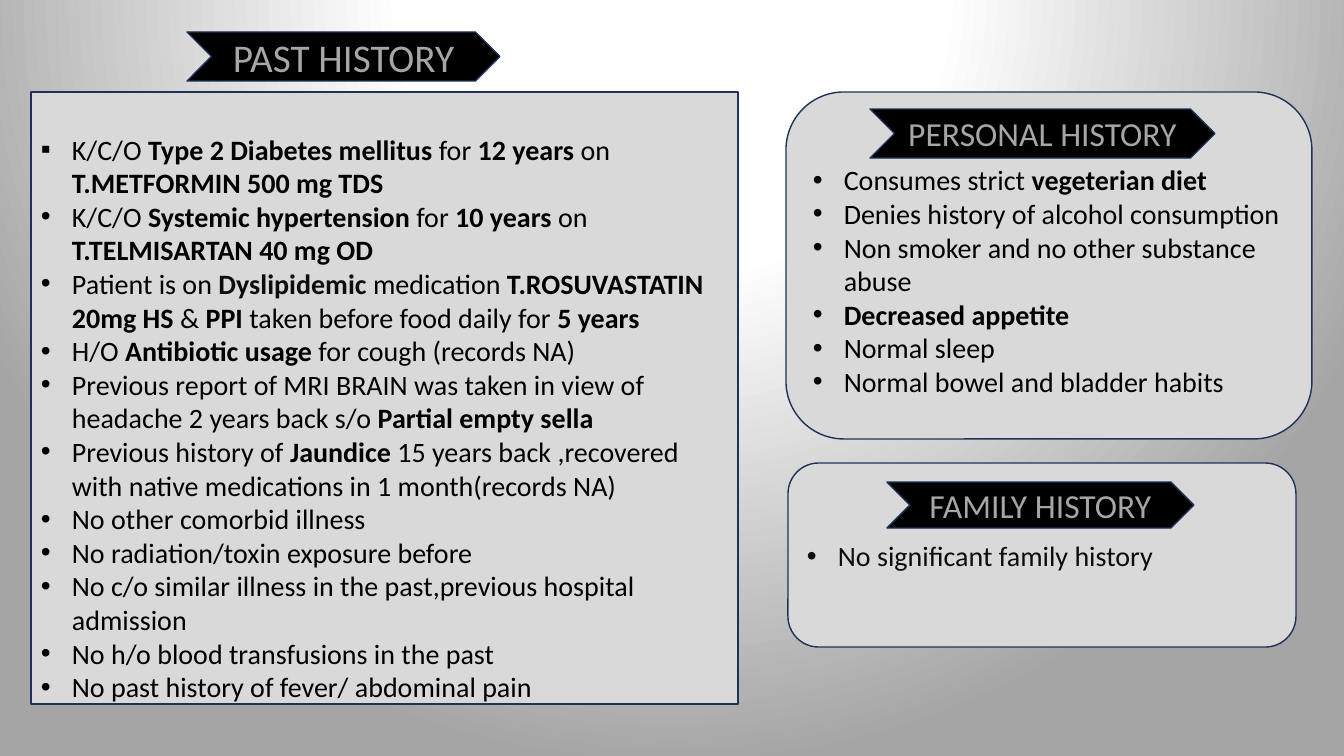
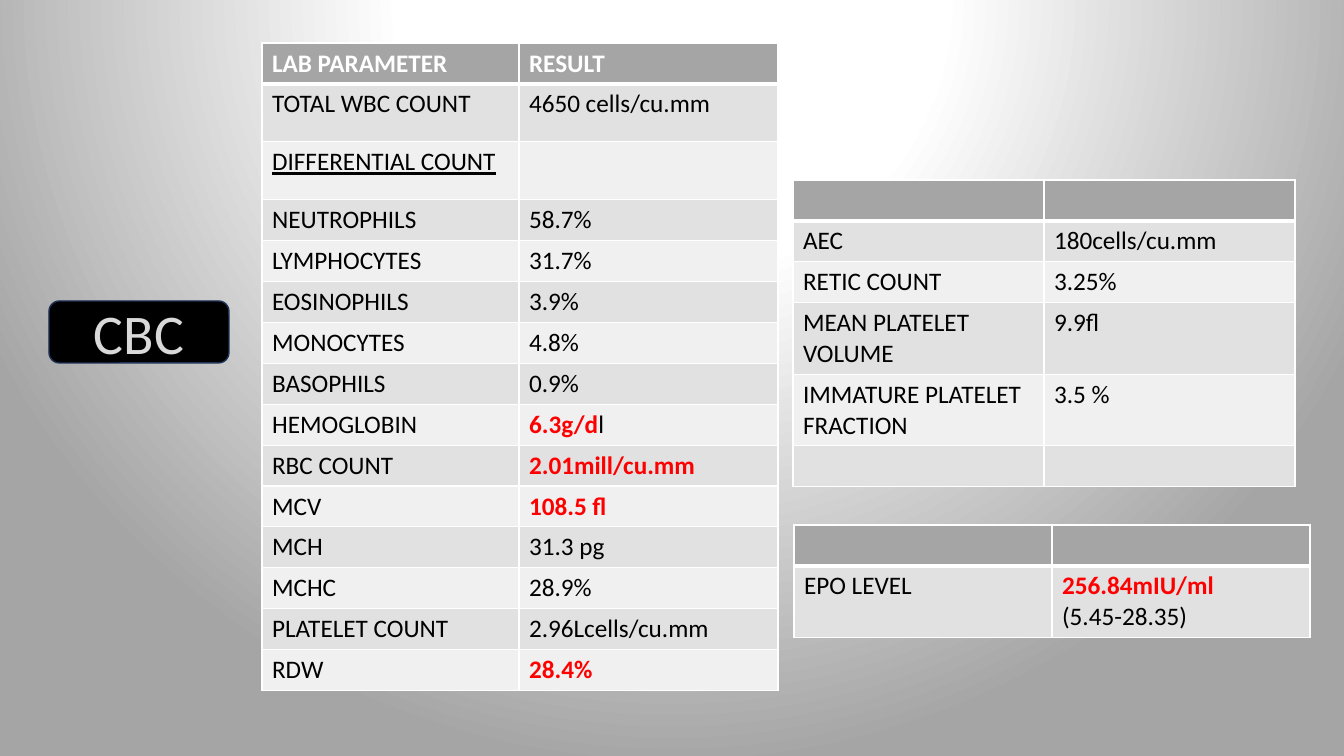
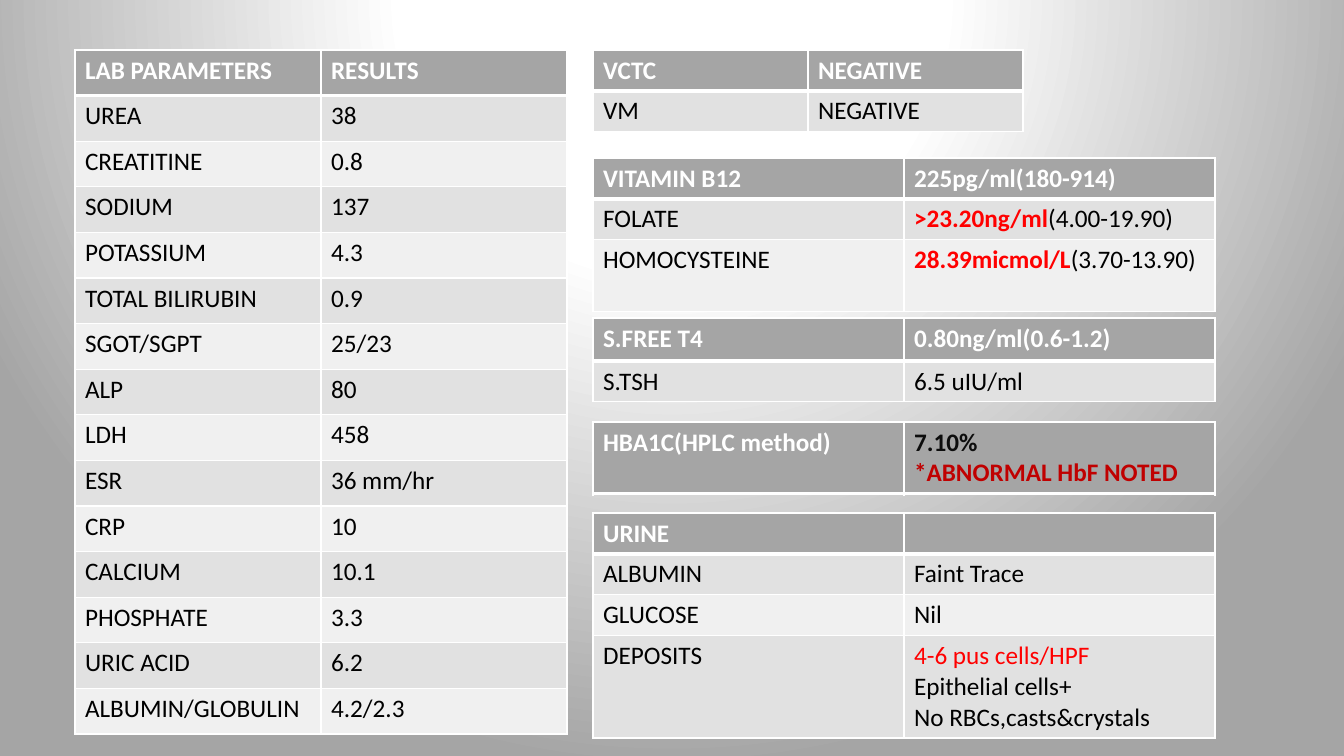
from dataclasses import dataclass

from pptx import Presentation
from pptx.dml.color import RGBColor
from pptx.enum.shapes import MSO_SHAPE
from pptx.enum.text import MSO_ANCHOR, PP_ALIGN
from pptx.oxml import parse_xml
from pptx.oxml.ns import nsdecls, qn
from pptx.util import Pt

PX = 914400 / 100.8
FONT = "Calibri"
BLACK = RGBColor(0x00, 0x00, 0x00)
WHITE = RGBColor(0xFF, 0xFF, 0xFF)
INK = RGBColor(0x0D, 0x0D, 0x0D)
RED = RGBColor(0xFF, 0x00, 0x00)
DARK_RED = RGBColor(0xC0, 0x00, 0x00)
NAVY = RGBColor(0x1E, 0x32, 0x56)
PANEL = RGBColor(0xD9, 0xD9, 0xD9)
TITLE = RGBColor(0xA6, 0xA6, 0xA6)
HEADER = RGBColor(0xA5, 0xA5, 0xA5)
BANDS = (RGBColor(0xE1, 0xE1, 0xE1), RGBColor(0xF0, 0xF0, 0xF0))
ROW = 40
TWO_LINES = 71


@dataclass
class Run:
    text: str
    bold: bool = None
    color: RGBColor = None
    underline: bool = None


def bold(text, color=None):
    return Run(text, True, color)


def high(text):
    """A result outside its normal range."""
    return Run(text, True, RED)


# A paragraph is one run or a list of runs; a plain string is a plain run.
PAST = [
    ["K/C/O ", bold("Type 2 Diabetes mellitus "), "for ", bold("12 years "), "on ",
     bold("T.METFORMIN 500 mg TDS")],
    ["K/C/O ", bold("Systemic hypertension "), "for ", bold("10 years "), "on ",
     bold("T.TELMISARTAN 40 mg OD")],
    ["Patient is on ", bold("Dyslipidemic", INK), " medication ",
     bold("T.ROSUVASTATIN 20mg HS "), "& ", bold("PPI"),
     " taken before food daily for ", bold("5 years")],
    ["H/O ", bold("Antibiotic usage "), "for cough (records NA)"],
    ["Previous report of MRI BRAIN was taken in view of headache 2 years back s/o ",
     bold("Partial empty sella")],
    ["Previous history of ", bold("Jaundice"),
     " 15 years back ,recovered with native medications in 1 month(records NA)"],
    "No other comorbid illness",
    "No radiation/toxin exposure before",
    "No c/o similar illness in the past,previous hospital admission",
    "No h/o blood transfusions in the past",
    "No past history of fever/ abdominal pain",
]
PERSONAL = [
    ["Consumes strict ", bold("vegeterian diet")],
    "Denies history of alcohol consumption",
    "Non smoker and no other substance abuse",
    bold("Decreased appetite"),
    "Normal sleep",
    "Normal bowel and bladder habits",
]
FAMILY = [Run("No significant family history", color=INK)]

# shape, box, top inset, first bullet, paragraphs
PANELS = [
    (MSO_SHAPE.RECTANGLE, (31, 92, 707, 612), 40, "▪", PAST),
    (MSO_SHAPE.ROUNDED_RECTANGLE, (786, 92, 526, 347), 54, "•", PERSONAL),
    (MSO_SHAPE.ROUNDED_RECTANGLE, (788, 463, 508, 184), 67, "•", FAMILY),
]
# shape, box, text, size, colour
HISTORY_LABELS = [
    (MSO_SHAPE.CHEVRON, (187, 32, 313, 49), "PAST HISTORY", 28, TITLE),
    (MSO_SHAPE.CHEVRON, (870, 109, 345, 49), "PERSONAL HISTORY", 24, TITLE),
    (MSO_SHAPE.CHEVRON, (887, 482, 307, 46), "FAMILY HISTORY", 24, TITLE),
]
CBC_LABELS = [
    (MSO_SHAPE.ROUNDED_RECTANGLE, (49, 301, 180, 62), "CBC", 40, PANEL),
]

# left and top, column widths, row heights, rows; a tuple in a cell holds paragraphs
CBC_TABLES = [
    ((262, 43), (257, 259), [ROW, 58, 58] + [ROW] * 12, [
        ["LAB PARAMETER", "RESULT"],
        ["TOTAL WBC COUNT", "4650 cells/cu.mm"],
        [Run("DIFFERENTIAL COUNT", underline=True), ""],
        ["NEUTROPHILS", "58.7%"],
        ["LYMPHOCYTES", "31.7%"],
        ["EOSINOPHILS", "3.9%"],
        ["MONOCYTES", "4.8%"],
        ["BASOPHILS", "0.9%"],
        ["HEMOGLOBIN", [high("6.3g/d"), "l"]],
        ["RBC COUNT", high("2.01mill/cu.mm")],
        ["MCV", high("108.5 fl")],
        ["MCH", "31.3 pg"],
        ["MCHC", "28.9%"],
        ["PLATELET COUNT", "2.96Lcells/cu.mm"],
        ["RDW", high("28.4%")],
    ]),
    ((793, 180), (251, 251), [ROW] * 3 + [TWO_LINES] * 2 + [ROW], [
        ["", ""],
        ["AEC", "180cells/cu.mm"],
        ["RETIC COUNT", "3.25%"],
        ["MEAN PLATELET VOLUME", "9.9fl"],
        ["IMMATURE PLATELET FRACTION", "3.5 %"],
        ["", ""],
    ]),
    ((794, 525), (258, 258), [ROW, TWO_LINES], [
        ["", ""],
        ["EPO LEVEL", (high("256.84mIU/ml"), "(5.45-28.35)")],
    ]),
]
RIGHT = 593
WIDE = (311, 311)
LAB_TABLES = [
    ((75, 50), (246, 246), [684 / 15] * 15, [
        ["LAB PARAMETERS", "RESULTS"],
        ["UREA", "38"],
        ["CREATITINE", "0.8"],
        ["SODIUM", "137"],
        ["POTASSIUM", "4.3"],
        ["TOTAL BILIRUBIN", "0.9"],
        ["SGOT/SGPT", "25/23"],
        ["ALP", "80"],
        ["LDH", "458"],
        ["ESR", "36 mm/hr"],
        ["CRP", "10"],
        ["CALCIUM", "10.1"],
        ["PHOSPHATE", "3.3"],
        ["URIC ACID", "6.2"],
        ["ALBUMIN/GLOBULIN", "4.2/2.3"],
    ]),
    ((RIGHT, 50), (215, 215), [ROW] * 2, [
        ["VCTC", "NEGATIVE"],
        ["VM", "NEGATIVE"],
    ]),
    ((RIGHT, 158), WIDE, [ROW, ROW, 72], [
        ["VITAMIN B12", "225pg/ml(180-914)"],
        ["FOLATE", [high(">23.20ng/ml"), "(4.00-19.90)"]],
        ["HOMOCYSTEINE", [high("28.39micmol/L"), "(3.70-13.90)"]],
    ]),
    ((RIGHT, 318), WIDE, [43, ROW], [
        ["S.FREE T4", "0.80ng/ml(0.6-1.2)"],
        ["S.TSH", "6.5 uIU/ml"],
    ]),
    ((RIGHT, 422), WIDE, [TWO_LINES], [
        ["HBA1C(HPLC method)",
         (bold("7.10%", INK), bold("*ABNORMAL HbF NOTED", DARK_RED))],
    ]),
    ((RIGHT, 513), WIDE, [ROW] * 3 + [102], [
        ["URINE", ""],
        ["ALBUMIN", "Faint Trace"],
        ["GLUCOSE", "Nil"],
        ["DEPOSITS", (Run("4-6 pus cells/HPF", color=RED), "Epithelial cells+",
                      "No RBCs,casts&crystals")],
    ]),
]


def px(n):
    return round(n * PX)


def set_background(master):
    """White glow from the top, fading to grey, on every slide."""
    master.background.fill.solid()
    bg = master.element.find(".//" + qn("p:bgPr"))
    stops = "".join(
        f'<a:gs pos="{pos * 1000}"><a:srgbClr val="{color}"/></a:gs>'
        for pos, color in ((0, WHITE), (35, WHITE), (100, HEADER)))
    bg.replace(bg.find(qn("a:solidFill")), parse_xml(
        f'<a:gradFill {nsdecls("a")} rotWithShape="1"><a:gsLst>{stops}</a:gsLst>'
        '<a:path path="circle"><a:fillToRect l="50000" t="-80000" r="50000" b="180000"/>'
        '</a:path></a:gradFill>'))


def add_runs(p, content, size, color, is_bold=False):
    for item in content if isinstance(content, list) else [content]:
        run = Run(item) if isinstance(item, str) else item
        r = p.add_run()
        r.text = run.text
        r.font.name = FONT
        r.font.size = Pt(size)
        r.font.bold = is_bold if run.bold is None else run.bold
        r.font.underline = run.underline
        r.font.color.rgb = run.color or color


def paragraphs(tf, contents):
    """Pair each content with its own paragraph of the frame."""
    for i, content in enumerate(contents):
        yield (tf.add_paragraph() if i else tf.paragraphs[0]), content


def add_box(slide, kind, box, fill):
    sp = slide.shapes.add_shape(kind, *map(px, box))
    sp.shadow.inherit = False
    sp.fill.solid()
    sp.fill.fore_color.rgb = fill
    sp.line.color.rgb = NAVY
    sp.line.width = Pt(1)
    return sp


def add_panel(slide, kind, box, inset, first_bullet, items):
    tf = add_box(slide, kind, box, PANEL).text_frame
    tf.vertical_anchor = MSO_ANCHOR.TOP
    tf.margin_top = px(inset)
    tf.margin_bottom = 0
    bullet = first_bullet
    for p, item in paragraphs(tf, items):
        p.alignment = PP_ALIGN.LEFT
        pPr = p._p.get_or_add_pPr()
        pPr.set("marL", str(px(31)))
        pPr.set("indent", str(px(-31)))
        pPr.append(parse_xml(f'<a:buFont {nsdecls("a")} typeface="Arial"/>'))
        pPr.append(parse_xml(f'<a:buChar {nsdecls("a")} char="{bullet}"/>'))
        add_runs(p, item, 20, BLACK)
        bullet = "•"


def add_label(slide, kind, box, text, size, color):
    p = add_box(slide, kind, box, BLACK).text_frame.paragraphs[0]
    p.alignment = PP_ALIGN.CENTER
    add_runs(p, text, size, color)


def set_borders(cell, top, bottom):
    tcPr = cell._tc.get_or_add_tcPr()
    for i, (side, width) in enumerate((("L", 1), ("R", 1), ("T", top), ("B", bottom))):
        tcPr.insert(i, parse_xml(
            f'<a:ln{side} {nsdecls("a")} w="{Pt(width)}"><a:solidFill>'
            f'<a:srgbClr val="{WHITE}"/></a:solidFill></a:ln{side}>'))


def add_lab_table(slide, origin, widths, heights, rows):
    size = sum(widths), sum(heights)
    table = slide.shapes.add_table(
        len(rows), len(widths), *map(px, origin + size)).table
    table.first_row = table.horz_banding = False
    for column, width in zip(table.columns, widths):
        column.width = px(width)
    for i, (height, row) in enumerate(zip(heights, rows)):
        table.rows[i].height = px(height)
        header = i == 0
        for j, content in enumerate(row):
            cell = table.cell(i, j)
            cell.fill.solid()
            cell.fill.fore_color.rgb = HEADER if header else BANDS[(i - 1) % 2]
            set_borders(cell, 3 if i == 1 else 1, 3 if header else 1)
            if not content:
                continue
            contents = content if isinstance(content, tuple) else (content,)
            for p, text in paragraphs(cell.text_frame, contents):
                add_runs(p, text, 18, WHITE if header else BLACK, header)


def main():
    prs = Presentation()
    prs.slide_width, prs.slide_height = px(1344), px(756)
    set_background(prs.slide_master)
    for panels, labels, tables in (
            (PANELS, HISTORY_LABELS, []),
            ([], CBC_LABELS, CBC_TABLES),
            ([], [], LAB_TABLES)):
        s = prs.slides.add_slide(prs.slide_layouts[6])
        for panel in panels:
            add_panel(s, *panel)
        for label in labels:
            add_label(s, *label)
        for table in tables:
            add_lab_table(s, *table)
    prs.save("out.pptx")


if __name__ == "__main__":
    main()
